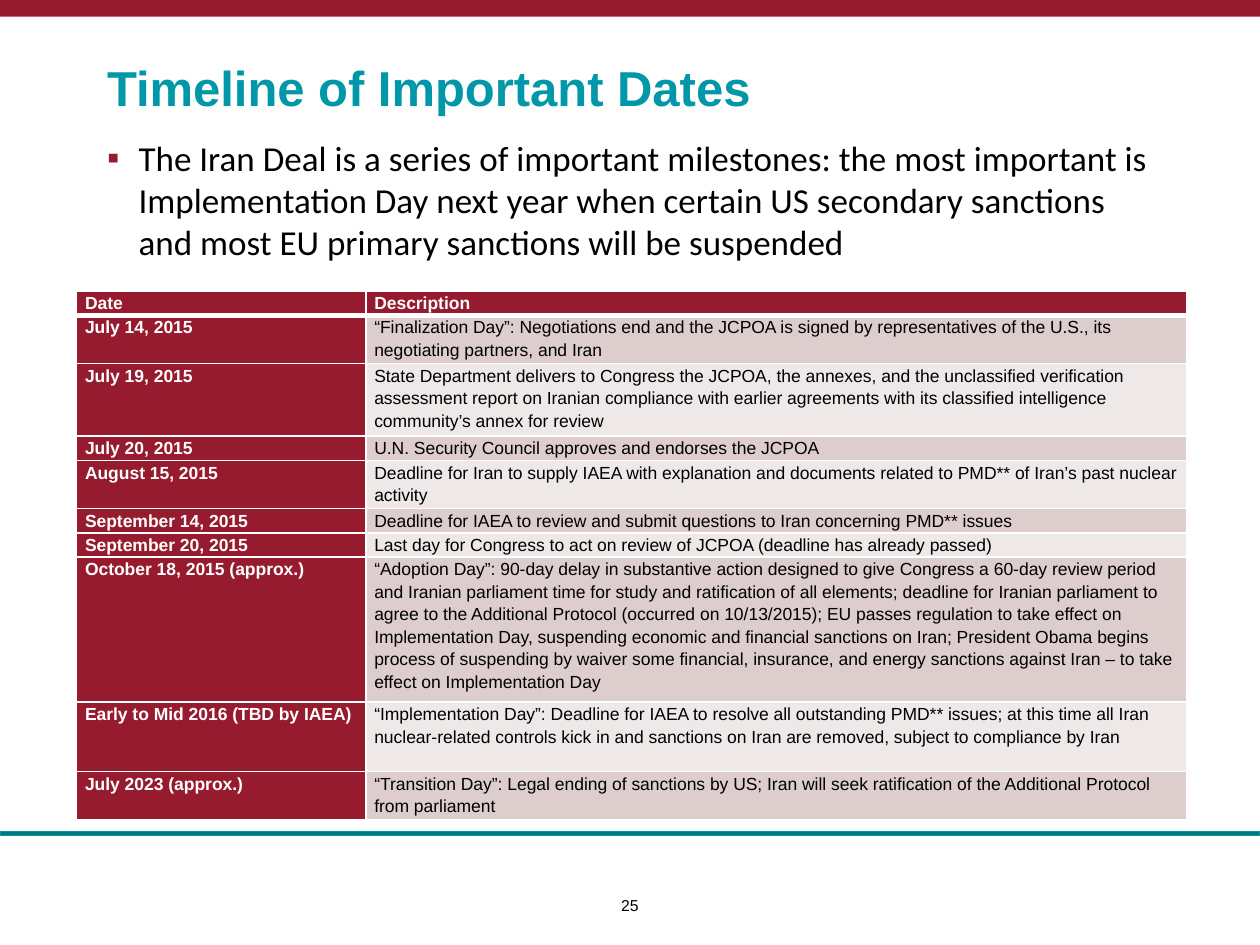
"""Build the slide with the timeline of important dates."""
from dataclasses import dataclass

from lxml import etree
from pptx import Presentation
from pptx import util as u
from pptx.dml.color import RGBColor
from pptx.enum import shapes, text
from pptx.oxml import ns

Pt = u.Pt


@dataclass(frozen=True)
class Theme:
    red: str = "971B2F"
    teal: str = "0097A9"
    dark_teal: str = "007680"
    black: str = "000000"
    white: str = "FFFFFF"
    bands: tuple = ("DDCDCD", "EFE8E8")
    title_size: float = 28
    body_size: float = 20
    table_size: float = 10
    number_size: float = 9
    heading_font: str = "Arial"
    body_font: str = "Calibri"


theme = Theme()


def write(frame, words, *, size, color=theme.black, font=theme.heading_font, bold=False,
          align=text.PP_ALIGN.LEFT, spacing=1.0, anchor=text.MSO_ANCHOR.TOP):
    """Put one formatted paragraph in a text frame and return it."""
    frame.word_wrap = True
    frame.vertical_anchor = anchor
    frame.margin_left = frame.margin_top = frame.margin_right = frame.margin_bottom = 0
    para = frame.paragraphs[0]
    para.alignment = align
    para.line_spacing = spacing
    para.space_before = Pt(0)
    span = para.add_run()
    span.text = words
    span.font.size = Pt(size)
    span.font.name = font
    span.font.bold = bold
    span.font.color.rgb = RGBColor.from_string(color)
    return para


def add_border(cell, side, width):
    """Draw one white cell border."""
    line = etree.SubElement(cell._tc.get_or_add_tcPr(), ns.qn(f"a:{side}"), w=str(Pt(width)))
    fill = etree.SubElement(line, ns.qn("a:solidFill"))
    etree.SubElement(fill, ns.qn("a:srgbClr"), val=theme.white)


deck = Presentation()
deck.slide_width, deck.slide_height = Pt(720), Pt(540)
page = deck.slides.add_slide(deck.slide_layouts[5])

bars = [(0, 9.5, theme.red, None), (475.2, 2.2, theme.dark_teal, theme.teal)]
for top, height, color, outline in bars:
    bar = page.shapes.add_shape(shapes.MSO_SHAPE.RECTANGLE, 0, Pt(top), Pt(720), Pt(height))
    bar.shadow.inherit = False
    bar.fill.solid()
    bar.fill.fore_color.rgb = RGBColor.from_string(color)
    if outline:
        bar.line.color.rgb = RGBColor.from_string(outline)
        bar.line.width = Pt(0.75)
    else:
        bar.line.fill.background()

title = page.shapes.title
title.left, title.top, title.width, title.height = Pt(61.2), Pt(22.3), Pt(622), Pt(44)
write(title.text_frame, "Timeline of Important Dates", size=theme.title_size,
      color=theme.teal, bold=True, anchor=text.MSO_ANCHOR.BOTTOM)

number_box = page.shapes.add_textbox(Pt(330.5), Pt(512), Pt(59), Pt(18.7))
write(number_box.text_frame, "25", size=theme.number_size, align=text.PP_ALIGN.CENTER)

body_box = page.shapes.add_textbox(Pt(61.2), Pt(77.8), Pt(597), Pt(348.5))
para = write(
    body_box.text_frame,
    "The Iran Deal is a series of important milestones: the most important is "
    "Implementation Day next year when certain US secondary sanctions and most EU "
    "primary sanctions will be suspended",
    size=theme.body_size, font=theme.body_font)
properties = para._p.get_or_add_pPr()
properties.set("marL", str(Pt(18)))
properties.set("indent", str(Pt(-18)))
bullet_color = etree.SubElement(properties, ns.qn("a:buClr"))
etree.SubElement(bullet_color, ns.qn("a:srgbClr"), val=theme.red)
etree.SubElement(properties, ns.qn("a:buFont"), typeface=theme.heading_font)
etree.SubElement(properties, ns.qn("a:buChar"), char="▪")

timeline = [
    (12.2, "Date", "Description"),
    (26.6, "July 14, 2015",
     "“Finalization Day”: Negotiations end and the JCPOA is signed by representatives of "
     "the U.S., its negotiating partners, and Iran"),
    (39.6, "July 19, 2015",
     "State Department delivers to Congress the JCPOA, the annexes, and the unclassified "
     "verification assessment report on Iranian compliance with earlier agreements with its "
     "classified intelligence community’s annex for review"),
    (13, "July 20, 2015", "U.N. Security Council approves and endorses the JCPOA"),
    (26.6, "August 15, 2015",
     "Deadline for Iran to supply IAEA with explanation and documents related to PMD** of "
     "Iran’s past nuclear activity"),
    (13, "September 14, 2015",
     "Deadline for IAEA to review and submit questions to Iran concerning PMD** issues"),
    (13, "September 20, 2015",
     "Last day for Congress to act on review of JCPOA (deadline has already passed)"),
    (79.2, "October 18, 2015 (approx.)",
     "“Adoption Day”: 90-day delay in substantive action designed to give Congress a 60-day "
     "review period and Iranian parliament time for study and ratification of all elements; "
     "deadline for Iranian parliament to agree to the Additional Protocol (occurred on "
     "10/13/2015); EU passes regulation to take effect on Implementation Day, suspending "
     "economic and financial sanctions on Iran; President Obama begins process of suspending "
     "by waiver some financial, insurance, and energy sanctions against Iran – to take "
     "effect on Implementation Day"),
    (39.6, "Early to Mid 2016 (TBD by IAEA)",
     "“Implementation Day”: Deadline for IAEA to resolve all outstanding PMD** issues; at "
     "this time all Iran nuclear-related controls kick in and sanctions on Iran are removed, "
     "subject to compliance by Iran"),
    (26.6, "July 2023 (approx.)",
     "“Transition Day”: Legal ending of sanctions by US; Iran will seek ratification of the "
     "Additional Protocol from parliament"),
]
table_height = sum(height for height, *_ in timeline)
table = page.shapes.add_table(len(timeline), 2, Pt(43.8), Pt(166.3), Pt(634.3),
                              Pt(table_height)).table
table.horz_banding = False
table.columns[0].width, table.columns[1].width = Pt(165.3), Pt(469)
for row, (height, *entries) in enumerate(timeline):
    table.rows[row].height = Pt(height)
    for column, words in enumerate(entries):
        cell = table.cell(row, column)
        heading = row == 0 or column == 0
        write(cell.text_frame, words, size=theme.table_size, bold=heading, spacing=1.15,
              color=theme.white if heading else theme.black)
        cell.margin_left = cell.margin_right = Pt(4.8)
        cell.margin_top = cell.margin_bottom = 0
        for side in ("lnL", "lnR", "lnT", "lnB"):
            header_rule = (row, side) in ((0, "lnB"), (1, "lnT"))
            add_border(cell, side, 3 if header_rule else 1)
        cell.fill.solid()
        cell.fill.fore_color.rgb = RGBColor.from_string(
            theme.red if heading else theme.bands[(row - 1) % 2])

deck.save("out.pptx")
